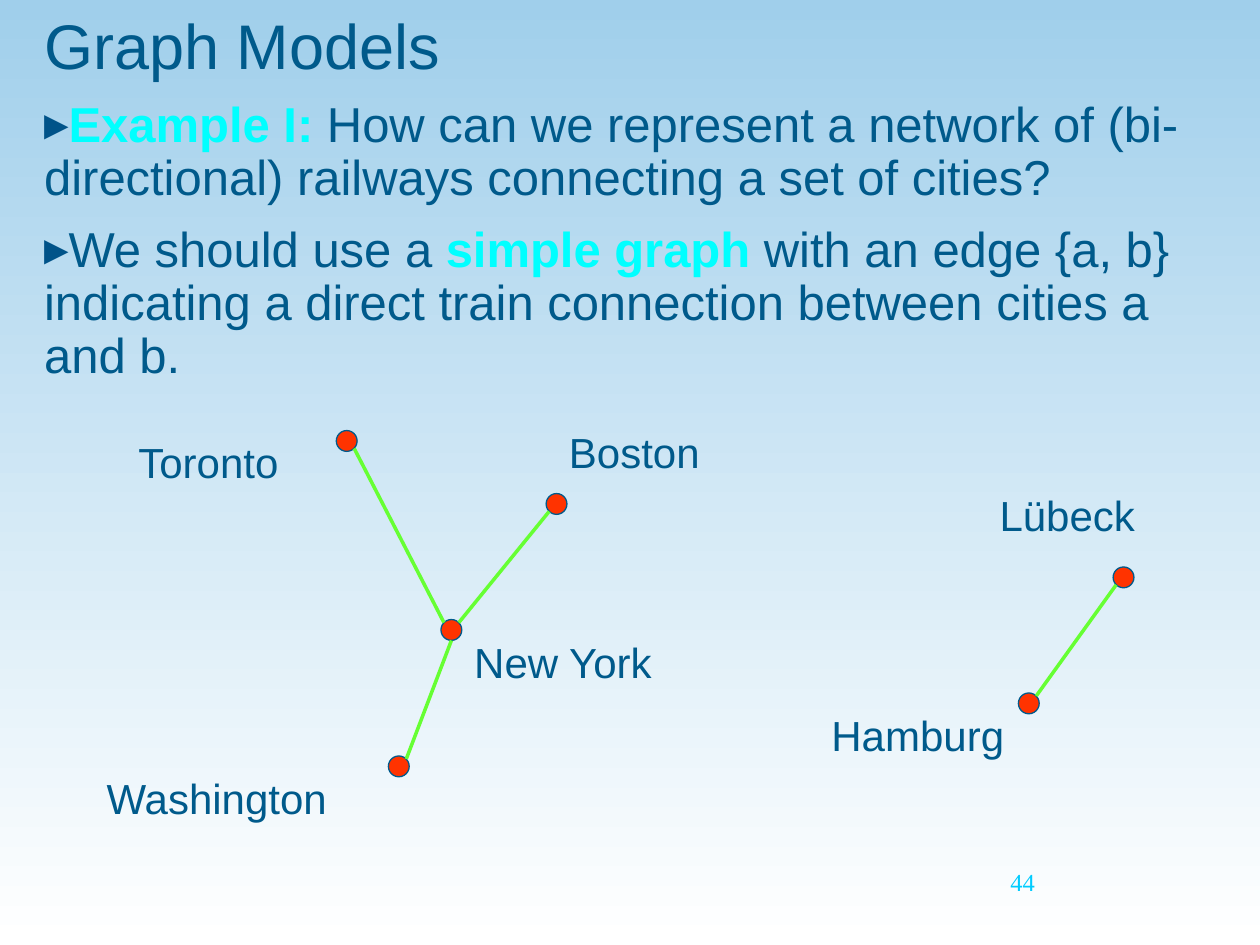
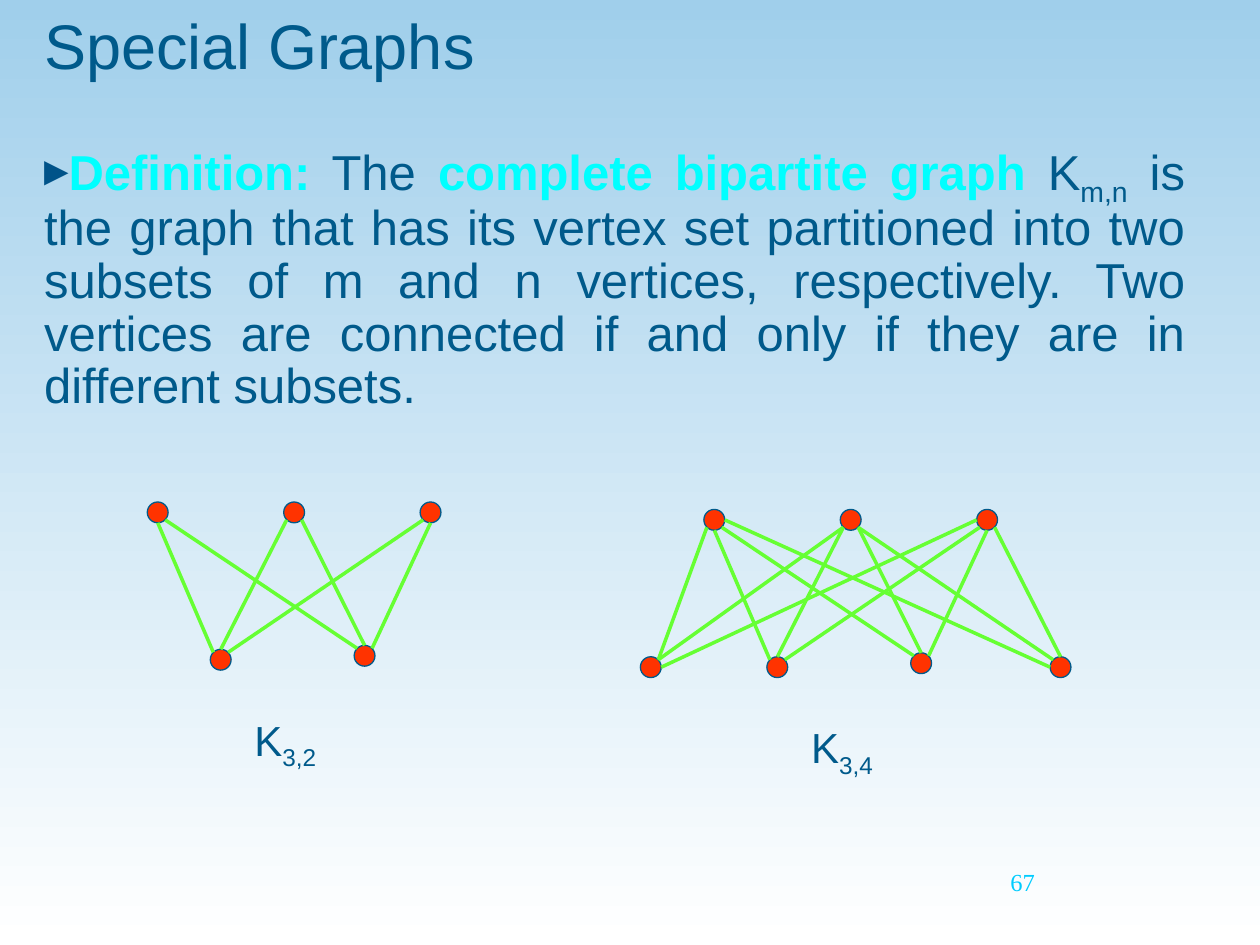
"""Build two slides on graph models and complete bipartite graphs."""
from dataclasses import dataclass
from typing import NamedTuple

from lxml import etree
from pptx import Presentation
from pptx.dml.color import RGBColor
from pptx.enum.shapes import MSO_CONNECTOR, MSO_SHAPE
from pptx.enum.text import MSO_ANCHOR, PP_ALIGN
from pptx.oxml.ns import qn
from pptx.util import Cm, Pt

VERTEX_SHAPE = MSO_SHAPE.FLOWCHART_CONNECTOR
STRAIGHT = MSO_CONNECTOR.STRAIGHT
TOP = MSO_ANCHOR.TOP
LEFT, JUSTIFY = PP_ALIGN.LEFT, PP_ALIGN.JUSTIFY

NAVY, BULLET_BLUE, CYAN, NUMBER_BLUE = "005A8B", "005389", "00FFFF", "00CCFF"
SKY, WHITE, RED, GREEN = "A0CFEB", "FFFFFF", "FF3300", "66FF33"
SANS, SERIF = "Arial", "Times New Roman"

RADIUS = 0.21
DIAGONAL = 0.15
SITES = {
    "n": (0, -RADIUS), "s": (0, RADIUS), "w": (-RADIUS, 0), "e": (RADIUS, 0),
    "nw": (-DIAGONAL, -DIAGONAL), "ne": (DIAGONAL, -DIAGONAL),
    "sw": (-DIAGONAL, DIAGONAL), "se": (DIAGONAL, DIAGONAL),
}


class Box(NamedTuple):
    """Left, top, width and height in centimetres."""
    left: float
    top: float
    width: float
    height: float


class Span(NamedTuple):
    """A stretch of text with its emphasis."""
    text: str
    key: bool = False
    subscript: bool = False


class Edge(NamedTuple):
    """Two vertices and the rim sites that the edge touches."""
    start: str
    start_site: str
    end: str
    end_site: str


@dataclass(frozen=True)
class City:
    """A vertex centre with the place of its label."""
    x: float
    y: float
    label_left: float
    label_top: float
    label_width: float


@dataclass(frozen=True)
class Bipartite:
    """A complete bipartite graph drawn at an offset."""
    subscript: str
    dx: float
    dy: float
    vertices: dict[str, tuple[float, float]]
    edges: list[Edge]


CITIES = {
    "New York": City(9.1, 12.7, 9.31, 12.7, 5.28),
    "Boston": City(11.22, 10.16, 11.22, 8.47, 4.45),
    "Washington": City(8.04, 15.45, 1.9, 15.45, 8.04),
    "Lübeck": City(22.65, 11.64, 19.9, 9.74, 5.5),
    "Toronto": City(6.99, 8.89, 2.54, 8.68, 5.72),
    "Hamburg": City(20.74, 14.18, 16.51, 14.18, 5.08),
}
RAILWAYS = [
    Edge("Toronto", "se", "New York", "nw"),
    Edge("New York", "ne", "Boston", "sw"),
    Edge("New York", "s", "Washington", "ne"),
    Edge("Hamburg", "ne", "Lübeck", "sw"),
]

CORE_VERTICES = {f"upper {i}": (3.18 + 2.75 * i, 10.33) for i in range(3)}
CORE_VERTICES |= {"inner left": (4.45, 13.3), "inner right": (7.35, 13.22)}
CORE_EDGES = [
    Edge("upper 0", "s", "inner left", "nw"),
    Edge("upper 1", "sw", "inner left", "n"),
    Edge("inner right", "ne", "upper 2", "s"),
    Edge("upper 2", "sw", "inner left", "ne"),
    Edge("upper 0", "se", "inner right", "nw"),
    Edge("upper 1", "se", "inner right", "n"),
]
OUTER_VERTICES = {"outer left": (1.9, 13.3), "outer right": (10.16, 13.3)}
OUTER_EDGES = [
    Edge("outer left", "ne", "upper 0", "sw"),
    Edge("outer left", "ne", "upper 1", "sw"),
    Edge("outer left", "e", "upper 2", "w"),
    Edge("upper 0", "e", "outer right", "w"),
    Edge("upper 1", "se", "outer right", "nw"),
    Edge("outer right", "n", "upper 2", "se"),
]
BIPARTITE_GRAPHS = [
    Bipartite("3,2", 0, 0, CORE_VERTICES, CORE_EDGES),
    Bipartite("3,4", 11.22, 0.15, CORE_VERTICES | OUTER_VERTICES,
              CORE_EDGES + OUTER_EDGES),
]


def rgb(value: str) -> RGBColor:
    """Turn a hex string into a colour."""
    return RGBColor.from_string(value)


def add_bullet(paragraph) -> None:
    """Give a paragraph the triangular bullet without an indent."""
    properties = paragraph._p.get_or_add_pPr()
    properties.set("marL", "0")
    properties.set("indent", "0")
    colour = etree.SubElement(properties, qn("a:buClr"))
    etree.SubElement(colour, qn("a:srgbClr"), val=BULLET_BLUE)
    etree.SubElement(properties, qn("a:buFont"), typeface=SANS)
    etree.SubElement(properties, qn("a:buChar"), char="▸")


def add_text(slide, box: Box, paragraphs: list[list[Span]], *, size: float = 24,
             color: str = NAVY, font: str = SANS, align=LEFT,
             bullet: bool = False, line_spacing: float = 1.0,
             gap: float = 0) -> None:
    """Write paragraphs of spans in a wrapped text box."""
    frame = slide.shapes.add_textbox(*map(Cm, box)).text_frame
    frame.word_wrap = True
    frame.vertical_anchor = TOP
    for index, spans in enumerate(paragraphs):
        paragraph = frame.add_paragraph() if index else frame.paragraphs[0]
        if bullet:
            add_bullet(paragraph)
        paragraph.alignment = align
        paragraph.line_spacing = line_spacing
        if index:
            paragraph.space_before = Pt(gap)
        for span in spans:
            run = paragraph.add_run()
            run.text = span.text
            run.font.name = font
            run.font.size = Pt(size)
            run.font.bold = span.key
            run.font.color.rgb = rgb(CYAN if span.key else color)
            if span.subscript:
                run._r.get_or_add_rPr().set("baseline", "-25000")


def add_vertex(slide, x: float, y: float) -> None:
    """Draw a vertex around its centre."""
    vertex = slide.shapes.add_shape(
        VERTEX_SHAPE, Cm(x - RADIUS), Cm(y - RADIUS), Cm(2 * RADIUS), Cm(2 * RADIUS))
    vertex.shadow.inherit = False
    vertex.fill.solid()
    vertex.fill.fore_color.rgb = rgb(RED)
    vertex.line.color.rgb = rgb(NAVY)
    vertex.line.width = Pt(0.75)


def add_graph(slide, vertices: dict[str, tuple[float, float]], edges: list[Edge],
              dx: float = 0, dy: float = 0) -> None:
    """Draw the vertices and then the edges between their rims."""
    for x, y in vertices.values():
        add_vertex(slide, x + dx, y + dy)
    for edge in edges:
        ends = []
        for name, site in ((edge.start, edge.start_site), (edge.end, edge.end_site)):
            (x, y), (rim_x, rim_y) = vertices[name], SITES[site]
            ends += [Cm(x + rim_x + dx), Cm(y + rim_y + dy)]
        link = slide.shapes.add_connector(STRAIGHT, *ends)
        link.line.color.rgb = rgb(GREEN)
        link.line.width = Pt(2)
        etree.SubElement(link._element.spPr, qn("a:effectLst"))


def set_background(master) -> None:
    """Fade the master background from sky blue down to white."""
    fill = master.background.fill
    fill.gradient()
    fill.gradient_angle = 270
    for stop, position, colour in zip(fill.gradient_stops, (0, 1), (SKY, WHITE)):
        stop.position = position
        stop.color.rgb = rgb(colour)


def add_slide(deck, title: str, number: str, body_box: Box,
              body: list[list[Span]], align=LEFT):
    """Add a slide with its title, bulleted body and number."""
    slide = deck.slides.add_slide(deck.slide_layouts[6])
    add_text(slide, Box(0.64, 0, 23.93, 2.11), [[Span(title)]], size=36)
    add_text(slide, body_box, body, size=28, align=align, bullet=True,
             line_spacing=0.9, gap=11)
    add_text(slide, Box(20.12, 17.35, 5.28, 1.27), [[Span(number)]], size=14,
             color=NUMBER_BLUE, font=SERIF)
    return slide


def build_models(deck) -> None:
    """Build the railway network slide."""
    slide = add_slide(deck, "Graph Models", "44", Box(0.64, 1.9, 24.33, 6.15), [
        [Span("Example I: ", key=True),
         Span("How can we represent a network of (bi-directional) railways "
              "connecting a set of cities?")],
        [Span("We should use a "), Span("simple graph", key=True),
         Span(" with an edge {a, b} indicating a direct train connection "
              "between cities a and b.")],
    ])
    for name, city in CITIES.items():
        add_text(slide, Box(city.label_left, city.label_top, city.label_width, 1.45),
                 [[Span(name)]])
    add_graph(slide, {name: (city.x, city.y) for name, city in CITIES.items()},
              RAILWAYS)


def build_special(deck) -> None:
    """Build the complete bipartite graph slide."""
    slide = add_slide(deck, "Special Graphs", "67", Box(0.64, 2.75, 23.5, 6.35), [
        [Span("Definition:", key=True), Span(" The "),
         Span("complete bipartite graph ", key=True), Span("K"),
         Span("m,n", subscript=True),
         Span(" is the graph that has its vertex set partitioned into two "
              "subsets of m and n vertices, respectively. Two vertices are "
              "connected if and only if they are in different subsets.")],
    ], align=JUSTIFY)
    for graph in BIPARTITE_GRAPHS:
        add_text(slide, Box(4.88 + graph.dx, 14.27 + graph.dy, 2.39, 1.45),
                 [[Span("K"), Span(graph.subscript, subscript=True)]])
        add_graph(slide, graph.vertices, graph.edges, graph.dx, graph.dy)


def main() -> None:
    """Build and save the deck."""
    deck = Presentation()
    deck.slide_width, deck.slide_height = Cm(25.4), Cm(19.05)
    set_background(deck.slide_master)
    build_models(deck)
    build_special(deck)
    deck.save("out.pptx")


if __name__ == "__main__":
    main()
